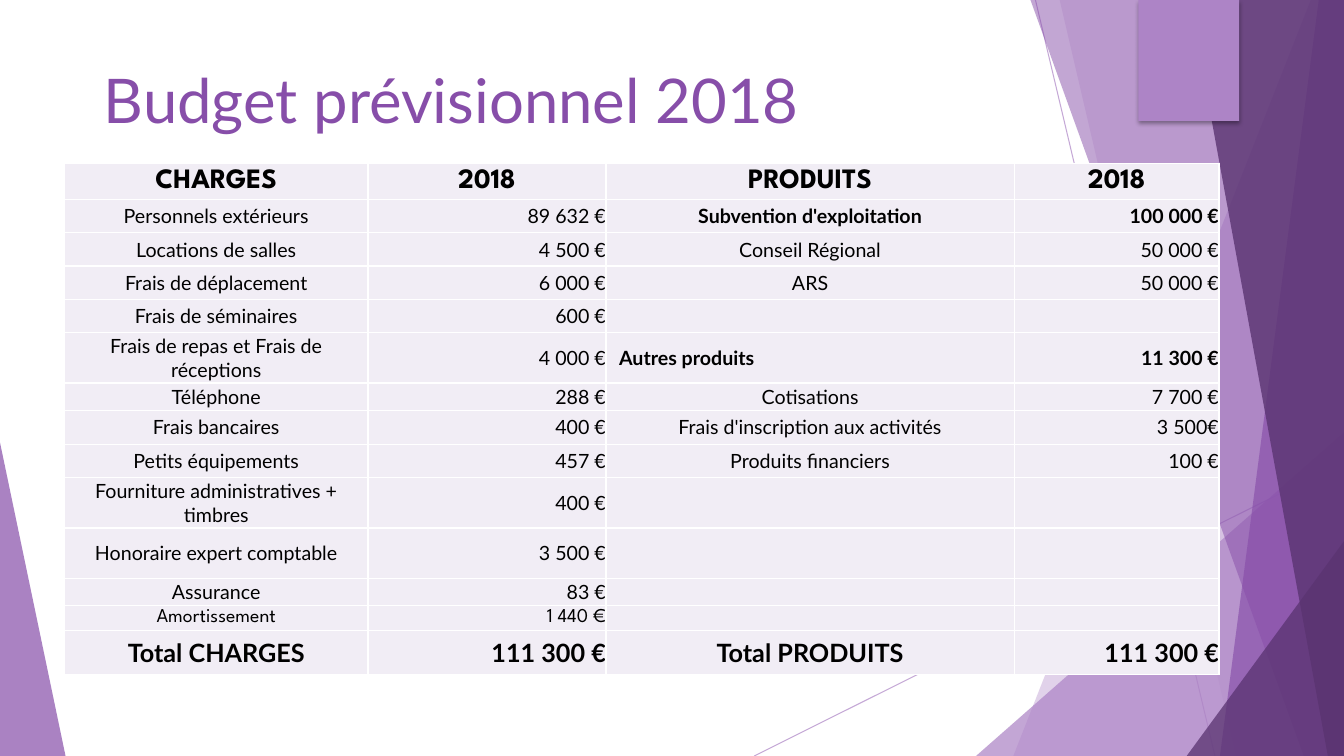
import pptx
import pptx.dml.color
import pptx.enum.shapes
import pptx.enum.text
import pptx.oxml
import pptx.oxml.ns
import pptx.util

PX = 9144
COLORS = {"lilac": "AD84C6", "violet": "874EA9", "plum": "5A3471",
          "cell": "F1EDF5", "white": "FFFFFF", "black": "000000"}
BODY, DISPLAY = "Lato", "League Spartan"
ALIGN = pptx.enum.text.PP_ALIGN

RAYS = [((748, 750), (1333, 458)), ((1027, 0), (1205, 750))]
FACETS = [
    ([(1300, 0), (1005, 750), (1333, 750), (1333, 0)], "lilac", 36),
    ([(1051, 0), (1226, 750), (1333, 750), (1333, 0)], "lilac", 20),
    ([(968, 750), (1333, 429), (1333, 750)], "lilac", 72),
    ([(1022, 0), (1293, 750), (1333, 750), (1333, 0)], "violet", 50),
    ([(1308, 0), (1210, 750), (1333, 750), (1333, 0)], "violet", 66),
    ([(1180, 0), (1317, 750), (1333, 750), (1333, 0)], "plum", 80),
    ([(1177, 750), (1333, 537), (1333, 750)], "plum", 76),
    ([(0, 439), (65, 750), (0, 750)], "violet", 70),
]

COLUMN_WIDTHS = [301, 236, 405, 203]
BUDGET = [
    (36, "CHARGES", "2018", "PRODUITS", "2018"),
    (33, "Personnels extérieurs", "89 632 €", "Subvention d'exploitation", "100 000 €"),
    (33, "Locations de salles", "4 500 €", "Conseil Régional", "50 000 €"),
    (33, "Frais de déplacement", "6 000 €", "ARS", "50 000 €"),
    (33, "Frais de séminaires", "600 €", "", ""),
    (50, "Frais de repas et Frais de réceptions", "4 000 €", "Autres produits", "11 300 €"),
    (27, "Téléphone", "288 €", "Cotisations", "7 700 €"),
    (34, "Frais bancaires", "400 €", "Frais d'inscription aux activités", "3 500€"),
    (33, "Petits équipements", "457 €", "Produits financiers", "100 €"),
    (50, "Fourniture administratives + timbres", "400 €", "", ""),
    (50, "Honoraire expert comptable", "3 500 €", "", ""),
    (27, "Assurance", "83 €", "", ""),
    (25, "Amortissement", "1 440 €", "", ""),
    (43, "Total CHARGES", "111 300 €", "Total PRODUITS", "111 300 €"),
]
SUBTOTALS = ("Subvention d'exploitation", "Autres produits")


class Deck:
    """Holds the style and the current slide, and draws each kind of element."""

    def __init__(self, prs):
        self.slide = prs.slides.add_slide(prs.slide_layouts[5])
        self.shapes = self.slide.shapes

    def rgb(self, name):
        return pptx.dml.color.RGBColor.from_string(COLORS[name])

    def xml(self, parent, markup):
        ns = pptx.oxml.ns.nsdecls("a")
        parent.append(pptx.oxml.parse_xml(markup.replace(">", f" {ns}>", 1)))

    def fade(self, sp, percent):
        color = next(sp._element.spPr.iter(pptx.oxml.ns.qn("a:srgbClr")))
        self.xml(color, f'<a:alpha val="{percent * 1000}"></a:alpha>')

    def paint(self, sp, color):
        sp.shadow.inherit = False
        sp.fill.solid()
        sp.fill.fore_color.rgb = self.rgb(color)
        sp.line.fill.background()

    def style(self, p, size, color, font=BODY, bold=False, align=ALIGN.LEFT):
        p.alignment = align
        for r in p.runs:
            r.font.size = pptx.util.Pt(size)
            r.font.name = font
            r.font.bold = bold
            r.font.color.rgb = self.rgb(color)

    def ray(self, start, end):
        points = [v * PX for v in start + end]
        line = self.shapes.add_connector(pptx.enum.shapes.MSO_CONNECTOR.STRAIGHT, *points)
        line.line.color.rgb = self.rgb("lilac")
        line.line.width = pptx.util.Pt(0.75)
        self.fade(line, 70)
        self.xml(line._element.spPr, "<a:effectLst></a:effectLst>")

    def facet(self, points, color, opacity):
        builder = self.shapes.build_freeform(*points[0], scale=PX)
        builder.add_line_segments(points[1:], close=True)
        sp = builder.convert_to_shape()
        self.paint(sp, color)
        self.fade(sp, opacity)

    def tab(self, *box):
        sp = self.shapes.add_shape(pptx.enum.shapes.MSO_SHAPE.RECTANGLE, *[v * PX for v in box])
        self.paint(sp, "lilac")
        effects = sp._element.spPr.find(pptx.oxml.ns.qn("a:effectLst"))
        self.xml(effects, '<a:outerShdw blurRad="38100" dist="25400" dir="5400000">'
                          '<a:srgbClr val="000000"><a:alpha val="35000"/></a:srgbClr></a:outerShdw>')

    def title(self, text, *box):
        sp = self.shapes.title
        sp.left, sp.top, sp.width, sp.height = [v * PX for v in box]
        tf = sp.text_frame
        tf.text = text
        tf.word_wrap = True
        tf.auto_size = pptx.enum.text.MSO_AUTO_SIZE.NONE
        tf.vertical_anchor = pptx.enum.text.MSO_ANCHOR.TOP
        self.style(tf.paragraphs[0], 44, "violet")

    def cell(self, cell, text, size, font, bold, align):
        cell.margin_left = cell.margin_right = cell.margin_top = cell.margin_bottom = 0
        cell.vertical_anchor = pptx.enum.text.MSO_ANCHOR.MIDDLE
        for side in "LRTB":
            self.xml(cell._tc.get_or_add_tcPr(),
                     f'<a:ln{side} w="12700"><a:solidFill><a:srgbClr val="{COLORS["white"]}"/>'
                     f'</a:solidFill></a:ln{side}>')
        cell.fill.solid()
        cell.fill.fore_color.rgb = self.rgb("cell")
        p = cell.text_frame.paragraphs[0]
        if text:
            p.text = text
            self.style(p, size, "black", font, bold, align)
        else:
            self.xml(p._p, '<a:endParaRPr sz="1000"></a:endParaRPr>')

    def table(self, left, top, widths, rows):
        height = sum(row[0] for row in rows)
        frame = self.shapes.add_table(len(rows), len(widths), left * PX, top * PX,
                                      sum(widths) * PX, height * PX)
        table = frame.table
        table.first_row = table.horz_banding = False
        for column, width in zip(table.columns, widths):
            column.width = width * PX
        for i, (height, *texts) in enumerate(rows):
            table.rows[i].height = height * PX
            header, total = i == 0, i == len(rows) - 1
            size = 20 if header else 18 if total else 14
            font = DISPLAY if header or texts[0] == "Amortissement" else BODY
            for j, text in enumerate(texts):
                bold = header or total or (j > 1 and texts[2] in SUBTOTALS)
                align = ALIGN.RIGHT if j % 2 and not header else ALIGN.CENTER
                if text == "Autres produits":
                    align = ALIGN.LEFT
                self.cell(table.cell(i, j), text, size, font, bold, align)
                if align == ALIGN.LEFT:
                    table.cell(i, j).margin_left = 13 * PX


def main():
    prs = pptx.Presentation()
    prs.slide_width, prs.slide_height = 1333 * PX, 750 * PX
    deck = Deck(prs)
    for ray in RAYS:
        deck.ray(*ray)
    for facet in FACETS:
        deck.facet(*facet)
    deck.tab(1129, 0, 100, 120)
    deck.title("Budget prévisionnel 2018", 93, 56, 850, 161)
    deck.table(64, 162, COLUMN_WIDTHS, BUDGET)
    prs.save("out.pptx")


if __name__ == "__main__":
    main()
